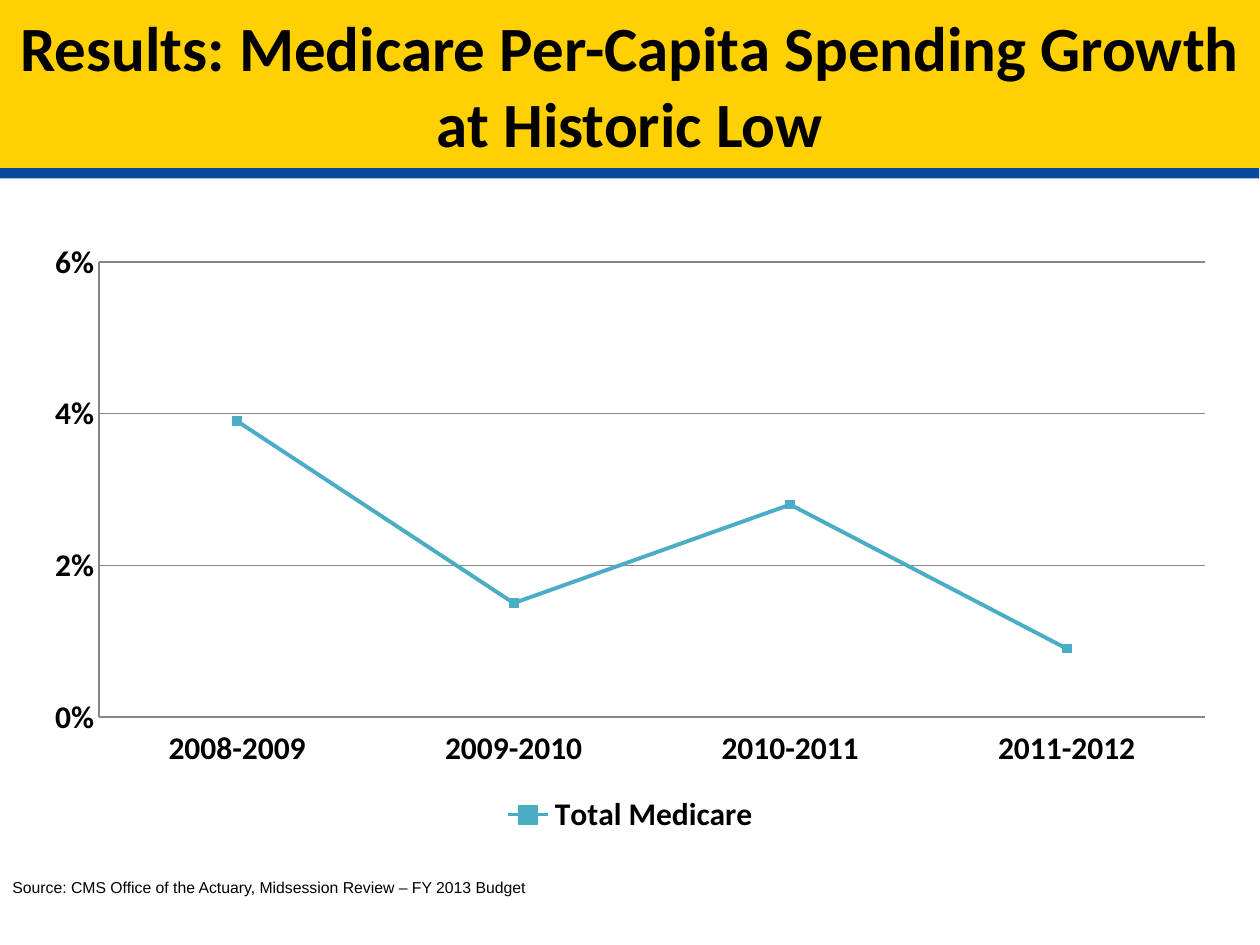
from dataclasses import dataclass

from lxml import etree
from pptx import Presentation
from pptx.chart.data import CategoryChartData
from pptx.dml.color import RGBColor
from pptx.enum.chart import (XL_CHART_TYPE, XL_LEGEND_POSITION, XL_MARKER_STYLE,
                             XL_TICK_LABEL_POSITION, XL_TICK_MARK)
from pptx.enum.shapes import MSO_SHAPE
from pptx.enum.text import MSO_ANCHOR, PP_ALIGN
from pptx.oxml import parse_xml
from pptx.oxml.ns import nsdecls
from pptx.util import Pt

EMU_PER_PX = 914400 / 126
LINE_MARKERS = XL_CHART_TYPE.LINE_MARKERS
LEGEND_BOTTOM = XL_LEGEND_POSITION.BOTTOM
SQUARE = XL_MARKER_STYLE.SQUARE
LABELS_LOW = XL_TICK_LABEL_POSITION.LOW
NO_TICKS = XL_TICK_MARK.NONE
RECTANGLE = MSO_SHAPE.RECTANGLE
MIDDLE = MSO_ANCHOR.MIDDLE
CENTER = PP_ALIGN.CENTER


@dataclass(frozen=True)
class Theme:
    """Colours, fonts and type sizes of the deck."""
    banner: str = "FFD004"
    stripe: str = "084A9C"
    text: str = "000000"
    series: str = "4BACC6"
    grid: str = "868686"
    heading_font: str = "Calibri"
    source_font: str = "Arial"
    title_size: int = 36
    chart_size: int = 18
    source_size: int = 9


THEME = Theme()


def px(length):
    """Turn pixels into EMU."""
    return round(length * EMU_PER_PX)


def color(code):
    """Turn a hex code into a colour."""
    return RGBColor.from_string(code)


def style_font(font, name, size, bold=False):
    """Give a font its face, size, weight and text colour."""
    font.name, font.size, font.bold = name, Pt(size), bold
    font.color.rgb = color(THEME.text)


def add_banner(page, box, title):
    """Place the title band with its hard blue shadow below."""
    band = page.shapes.add_shape(RECTANGLE, *map(px, box))
    band.fill.solid()
    band.fill.fore_color.rgb = color(THEME.banner)
    band.line.fill.background()
    band.shadow.inherit = False
    effects = band.element.spPr.find("{*}effectLst")
    effects.append(parse_xml(
        f'<a:outerShdw {nsdecls("a")} blurRad="0" dist="{Pt(6)}" dir="5640000" '
        f'algn="ctr" rotWithShape="0"><a:srgbClr val="{THEME.stripe}"/></a:outerShdw>'))
    frame = band.text_frame
    frame.word_wrap = True
    frame.vertical_anchor = MIDDLE
    para = frame.paragraphs[0]
    para.text = title
    para.alignment = CENTER
    style_font(para.font, THEME.heading_font, THEME.title_size, True)


def set_plot_box(chart, box, plot):
    """Fix the inner plot area, given relative to the chart box."""
    left, top, width, height = plot
    shares = {"x": left / box[2], "y": top / box[3],
              "w": width / box[2], "h": height / box[3]}
    area = chart.element.chart.plotArea
    for old in area.findall("{*}layout"):
        area.remove(old)
    layout = parse_xml(
        f'<c:layout {nsdecls("c")}><c:manualLayout><c:layoutTarget val="inner"/>'
        '<c:xMode val="edge"/><c:yMode val="edge"/></c:manualLayout></c:layout>')
    for key, share in shares.items():
        tag = etree.QName(layout[0].tag).namespace
        etree.SubElement(layout[0], f"{{{tag}}}{key}").set("val", f"{share:.3f}")
    area.insert(0, layout)


def style_line(line, code, width):
    """Give a line its colour and width."""
    line.color.rgb = color(code)
    line.width = Pt(width)


def add_growth_chart(page, box):
    """Place the line chart of spending growth."""
    data = CategoryChartData(number_format="0.0%")
    data.categories = ["2008-2009", "2009-2010", "2010-2011", "2011-2012"]
    data.add_series("Total Medicare", [0.039, 0.015, 0.028, 0.009])
    chart = page.shapes.add_chart(LINE_MARKERS, *map(px, box), data).chart
    chart.has_title = False
    style_font(chart.font, THEME.heading_font, THEME.chart_size, True)
    set_plot_box(chart, box, (67, 31, 1106, 455))

    chart.has_legend = True
    chart.legend.position = LEGEND_BOTTOM
    chart.legend.include_in_layout = False
    style_font(chart.legend.font, THEME.heading_font, THEME.chart_size, True)

    for axis in (chart.category_axis, chart.value_axis):
        axis.major_tick_mark = axis.minor_tick_mark = NO_TICKS
        style_line(axis.format.line, THEME.grid, 0.75)
        style_font(axis.tick_labels.font, THEME.heading_font, THEME.chart_size, True)
    chart.category_axis.tick_label_position = LABELS_LOW
    values = chart.value_axis
    values.minimum_scale, values.maximum_scale, values.major_unit = 0, 0.06, 0.02
    values.tick_labels.number_format = "0%"
    values.tick_labels.number_format_is_linked = False
    values.has_major_gridlines = True
    style_line(values.major_gridlines.format.line, THEME.grid, 0.75)

    plot = chart.plots[0]
    plot.vary_by_categories = False
    series = plot.series[0]
    series.smooth = False
    style_line(series.format.line, THEME.series, 2.25)
    series.marker.style = SQUARE
    series.marker.size = 5
    series.marker.format.fill.solid()
    series.marker.format.fill.fore_color.rgb = color(THEME.series)
    style_line(series.marker.format.line, THEME.series, 0.75)


def add_source(page, box, text):
    """Place the source note."""
    frame = page.shapes.add_textbox(*map(px, box)).text_frame
    frame.word_wrap = True
    para = frame.paragraphs[0]
    para.text = text
    style_font(para.font, THEME.source_font, THEME.source_size)


def main():
    """Build the deck and save it."""
    deck = Presentation()
    deck.slide_width, deck.slide_height = px(1260), px(945)
    page = deck.slides.add_slide(deck.slide_layouts[6])
    add_banner(page, (0, 0, 1260, 168),
               "Results: Medicare Per-Capita Spending Growth at Historic Low")
    add_growth_chart(page, (32, 231, 1197, 609))
    add_source(page, (0, 872, 850, 57),
               "Source: CMS Office of the Actuary, Midsession Review – FY 2013 Budget")
    deck.save("out.pptx")


if __name__ == "__main__":
    main()
